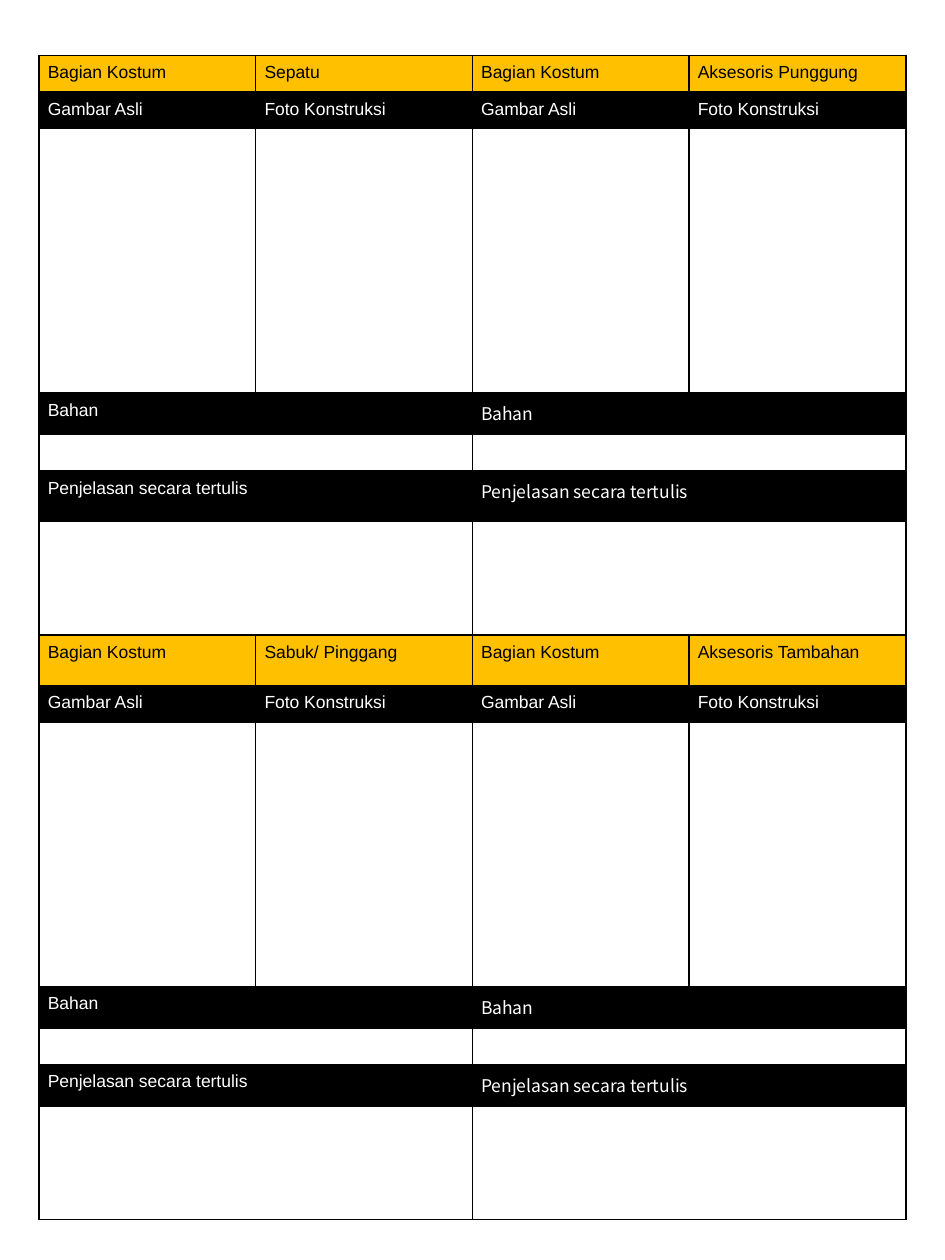
from dataclasses import dataclass

from lxml import etree
from pptx import Presentation
from pptx.dml.color import RGBColor
from pptx.oxml.ns import qn
from pptx.util import Inches, Pt


@dataclass(frozen=True)
class Theme:
    accent: str = "FFC000"
    dark: str = "000000"
    light: str = "FFFFFF"
    latin: str = "Arial"
    wide: str = "Noto Sans CJK KR"
    size: int = 10
    line: int = 1
    pad_x: float = 0.07
    pad_y: float = 0.06


THEME = Theme()
BORDER_SIDES = ("a:lnL", "a:lnR", "a:lnT", "a:lnB")
COLUMN_WIDTH = 1.72
CARD_COLUMNS, CARD_ROWS = 2, 7
# Title, headings, photos, materials label and space, notes label and space
UPPER_ROWS = [0.29, 0.29, 2.1, 0.33, 0.29, 0.4, 0.9]
LOWER_ROWS = [0.4, 0.29, 2.1, 0.33, 0.29, 0.33, 0.9]
COSTUME_PARTS = [
    ["Sepatu", "Aksesoris Punggung"],
    ["Sabuk/ Pinggang", "Aksesoris Tambahan"],
]


def draw_borders(cell):
    properties = cell._tc.get_or_add_tcPr()
    for position, side in enumerate(BORDER_SIDES):
        line = etree.Element(qn(side), w=str(Pt(THEME.line)))
        fill = etree.SubElement(line, qn("a:solidFill"))
        etree.SubElement(fill, qn("a:srgbClr"), val=THEME.dark)
        properties.insert(position, line)


def style_cell(cell, text="", fill=None, color=THEME.light, font=THEME.latin):
    cell.margin_left = cell.margin_right = Inches(THEME.pad_x)
    cell.margin_top = cell.margin_bottom = Inches(THEME.pad_y)
    if fill:
        cell.fill.solid()
        cell.fill.fore_color.rgb = RGBColor.from_string(fill)
    else:
        cell.fill.background()
    draw_borders(cell)

    paragraph = cell.text_frame.paragraphs[0]
    paragraph.font.size = Pt(THEME.size)
    paragraph.font.name = font
    paragraph.font.color.rgb = RGBColor.from_string(color)
    if text:
        paragraph.add_run().text = text
    else:
        # Keeps empty rows from growing to the default type size
        etree.SubElement(paragraph._p, qn("a:endParaRPr"), sz=str(THEME.size * 100))


def fill_card(table, top, left, costume_part, label_font):
    """Fill one costume card, two columns by seven rows, from its top-left cell."""
    label = {"fill": THEME.dark, "font": label_font}
    title = {"fill": THEME.accent, "color": THEME.dark}
    heading = {"fill": THEME.dark}
    rows = [
        (("Bagian Kostum", costume_part), title),
        (("Gambar Asli", "Foto Konstruksi"), heading),
        (("", ""), {}),
        (("Bahan",), label),
        (("",), {}),
        (("Penjelasan secara tertulis",), label),
        (("",), {}),
    ]
    for row, (texts, look) in enumerate(rows, top):
        first, last = table.cell(row, left), table.cell(row, left + 1)
        if len(texts) == 1:
            first.merge(last)
            texts = (texts[0], "")
        for cell, text in zip((first, last), texts):
            style_cell(cell, text, **look)


def add_costume_table(slide, left, top):
    heights = UPPER_ROWS + LOWER_ROWS
    columns = CARD_COLUMNS * len(COSTUME_PARTS[0])
    table = slide.shapes.add_table(
        len(heights), columns, Inches(left), Inches(top),
        Inches(COLUMN_WIDTH * columns), Inches(sum(heights)),
    ).table
    table.first_row = table.horz_banding = False
    for column in table.columns:
        column.width = Inches(COLUMN_WIDTH)
    for row, height in zip(table.rows, heights):
        row.height = Inches(height)

    # Cards: the right-hand ones set their labels in the wide font
    for band, parts in enumerate(COSTUME_PARTS):
        for side, (part, font) in enumerate(zip(parts, (THEME.latin, THEME.wide))):
            fill_card(table, band * CARD_ROWS, side * CARD_COLUMNS, part, font)


def main():
    deck = Presentation()
    deck.slide_width, deck.slide_height = Inches(7.5), Inches(10)
    slide = deck.slides.add_slide(deck.slide_layouts[6])
    add_costume_table(slide, left=0.31, top=0.44)
    deck.save("out.pptx")


if __name__ == "__main__":
    main()
